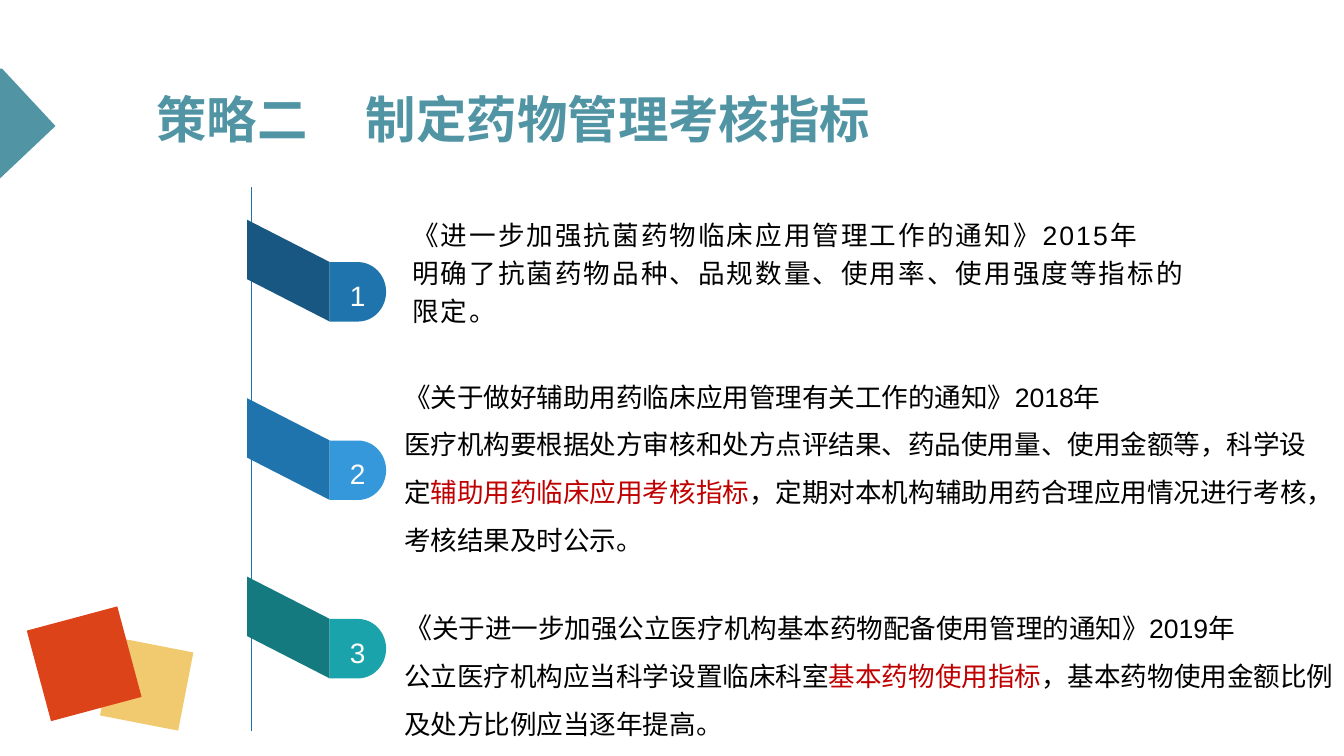
import pptx
import pptx.util
import pptx.dml.color
import pptx.enum.shapes
import pptx.enum.text
import pptx.oxml
import pptx.oxml.ns

Inches = pptx.util.Inches
Pt = pptx.util.Pt
Shapes = pptx.enum.shapes.MSO_SHAPE
Align = pptx.enum.text.PP_ALIGN
Anchor = pptx.enum.text.MSO_ANCHOR

TEAL, RED, BLACK, WHITE = "5195A5", "C00000", "000000", "FFFFFF"

ITEMS = [
    dict(fold="175782", tab="1F74AD", box=(3.99, 2.35, 7.96, 0.65),
         line_spacing=1.2, spacing=1.5,
         paragraphs=[
             [("《进一步加强抗菌药物临床应用管理工作的通知》2015年", {})],
             [("明确了抗菌药物品种、品规数量、使用率、使用强度等指标的限定。", {})],
         ]),
    dict(fold="1F74AD", tab="3498DB", box=(3.91, 4.24, 9.32, 0.65),
         line_spacing=1.5, spacing=0,
         paragraphs=[
             [("《关于做好辅助用药临床应用管理有关工作的通知》2018年", {})],
             [("医疗机构要根据处方审核和处方点评结果、药品使用量、使用金额等，科学设定", {}),
              ("辅助用药临床应用考核指标", {"color": RED}),
              ("，定期对本机构辅助用药合理应用情况进行考核，考核结果及时公示。", {})],
         ]),
    dict(fold="147A7F", tab="1AA3AA", box=(3.91, 6.29, 9.43, 0.65),
         line_spacing=1.5, spacing=0,
         paragraphs=[
             [("《", {"size": 20}),
              ("关于进一步加强公立医疗机构基本药物配备使用管理的通知》2019年", {})],
             [("公立医疗机构应当科学设置临床科室", {}),
              ("基本药物使用指标", {"color": RED}),
              ("，基本药物使用金额比例及处方比例应当逐年提高。", {})],
         ]),
]


def rgb(value):
    return pptx.dml.color.RGBColor.from_string(value)


def add_run(paragraph, text, size=19, color=BLACK, bold=False, spacing=0):
    run = paragraph.add_run()
    run.text = text
    run.font.name = "Arial"
    run.font.size = Pt(size)
    run.font.bold = bold
    run.font.color.rgb = rgb(color)
    if spacing:
        run._r.get_or_add_rPr().set("spc", str(int(spacing * 100)))


def paint(shape, color):
    shape.shadow.inherit = False
    shape.fill.solid()
    shape.fill.fore_color.rgb = rgb(color)
    shape.line.fill.background()


def add_polygon(slide, points, color):
    corners = [(Inches(x), Inches(y)) for x, y in points]
    builder = slide.shapes.build_freeform(*corners[0], scale=1.0)
    builder.add_line_segments(corners[1:], close=True)
    paint(builder.convert_to_shape(), color)


def add_square(slide, left, top, side, angle, color):
    square = slide.shapes.add_shape(
        Shapes.RECTANGLE, Inches(left), Inches(top), Inches(side), Inches(side))
    square.rotation = angle
    paint(square, color)


def add_decoration(slide):
    add_square(slide, 1.06, 6.39, 0.79, 11, "F1C96E")
    add_polygon(slide, [(0, 0.68), (0.02, 0.68), (0.55, 1.25), (0, 1.77)], TEAL)
    add_square(slide, 0.37, 6.12, 0.93, 345, "DD4319")


def add_title(slide, left, top, width, height):
    title = slide.shapes.title
    title.left, title.top = Inches(left), Inches(top)
    title.width, title.height = Inches(width), Inches(height)
    frame = title.text_frame
    frame.auto_size = pptx.enum.text.MSO_AUTO_SIZE.NONE
    frame.vertical_anchor = Anchor.MIDDLE
    paragraph = frame.paragraphs[0]
    paragraph.alignment = Align.LEFT
    add_run(paragraph, "策略二\t制定药物管理考核指标", size=36, color=TEAL, bold=True)
    properties = paragraph._p.get_or_add_pPr()
    properties.append(pptx.oxml.parse_xml(
        f'<a:tabLst {pptx.oxml.ns.nsdecls("a")}>'
        f'<a:tab pos="{Inches(2.08)}" algn="l"/></a:tabLst>'))


def add_timeline(slide, x, top, bottom):
    line = slide.shapes.add_connector(
        pptx.enum.shapes.MSO_CONNECTOR.STRAIGHT,
        Inches(x), Inches(top), Inches(x), Inches(bottom))
    line.line.color.rgb = rgb("1F74AD")
    line.line.width = Pt(0.5)
    line._element.spPr.append(
        pptx.oxml.parse_xml(f'<a:effectLst {pptx.oxml.ns.nsdecls("a")}/>'))


def add_ribbon(slide, left, top, number, fold, tab):
    fold_width, drop, band = 0.82, 0.42, 0.59
    right = left + fold_width
    add_polygon(slide, [(left, top), (right, top + drop),
                        (right, top + drop + band), (left, top + band)], fold)
    shape = slide.shapes.add_shape(
        Shapes.FLOWCHART_DELAY, Inches(right), Inches(top + drop),
        Inches(0.56), Inches(band))
    paint(shape, tab)
    frame = shape.text_frame
    frame.margin_left = Inches(0.08)
    frame.margin_right = frame.margin_top = frame.margin_bottom = 0
    frame.vertical_anchor = Anchor.MIDDLE
    paragraph = frame.paragraphs[0]
    paragraph.alignment = Align.CENTER
    paragraph.line_spacing = 1.2
    add_run(paragraph, str(number), size=20, color=WHITE, spacing=3)


def add_description(slide, box, paragraphs, line_spacing, spacing):
    frame = slide.shapes.add_textbox(*map(Inches, box)).text_frame
    frame.word_wrap = True
    frame.vertical_anchor = Anchor.MIDDLE
    for index, pieces in enumerate(paragraphs):
        paragraph = frame.add_paragraph() if index else frame.paragraphs[0]
        paragraph.line_spacing = line_spacing
        for text, style in pieces:
            add_run(paragraph, text, spacing=spacing, **style)


def main():
    presentation = pptx.Presentation()
    presentation.slide_width = Inches(13.33)
    presentation.slide_height = Inches(7.5)
    slide = presentation.slides.add_slide(presentation.slide_layouts[5])
    add_decoration(slide)
    add_title(slide, 1.45, 0.79, 10.36, 0.77)
    add_timeline(slide, 2.49, 1.86, 7.25)
    for index, item in enumerate(ITEMS):
        add_ribbon(slide, 2.45, 2.18 + 1.77 * index, index + 1,
                   item["fold"], item["tab"])
        add_description(slide, item["box"], item["paragraphs"],
                        item["line_spacing"], item["spacing"])
    presentation.save("out.pptx")


if __name__ == "__main__":
    main()
